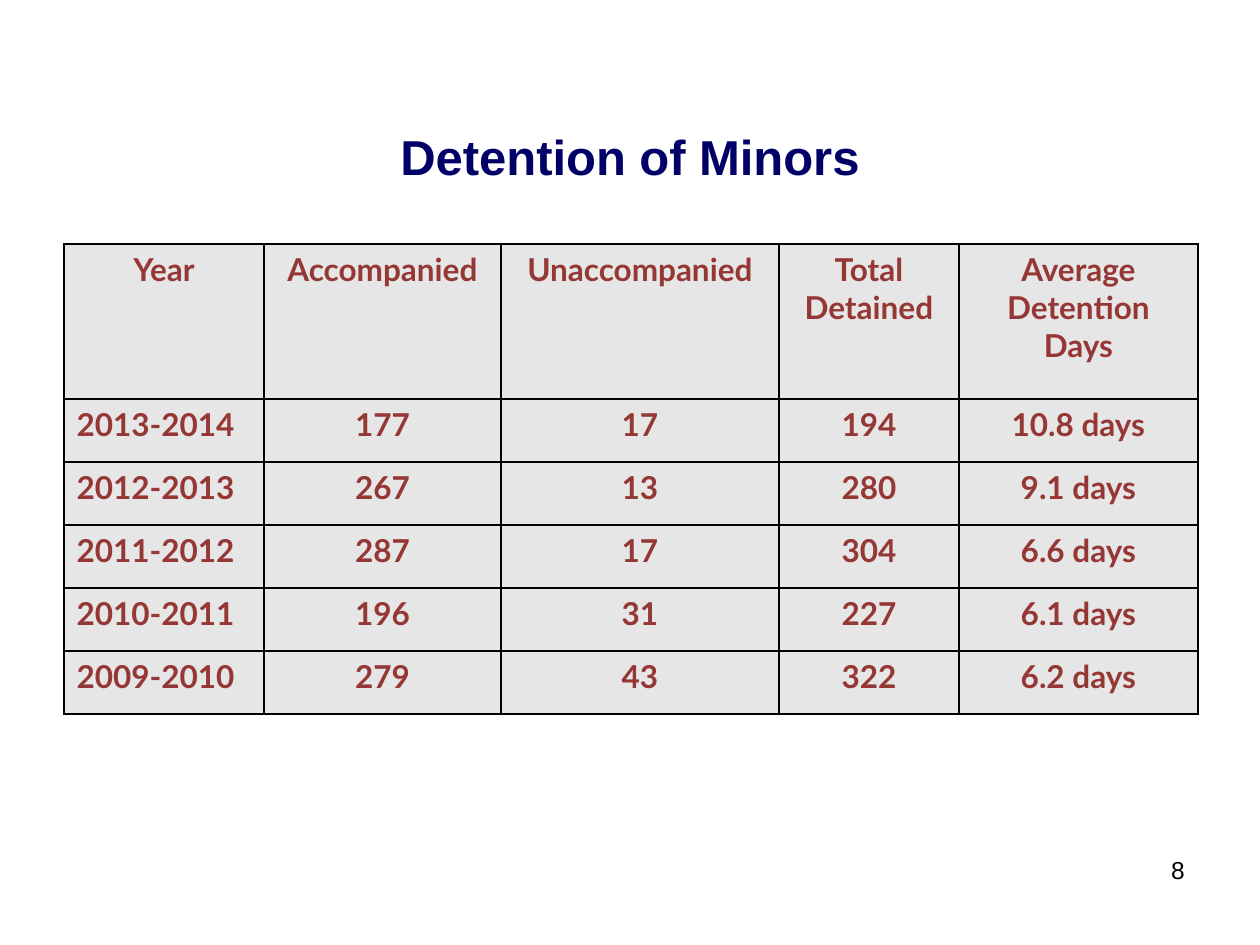
from lxml import etree
from pptx import Presentation
from pptx.dml.color import RGBColor
from pptx.enum.text import MSO_ANCHOR, PP_ALIGN
from pptx.oxml.ns import qn
from pptx.util import Pt

EMU_PER_PX = 914400 / 126
LEFT, CENTER, RIGHT = PP_ALIGN.LEFT, PP_ALIGN.CENTER, PP_ALIGN.RIGHT
MIDDLE = MSO_ANCHOR.MIDDLE
TITLE_ONLY = 5

COLUMN_WIDTHS = [200, 237, 278, 180, 239]
HEADER_HEIGHT, YEAR_HEIGHT = 155, 63
DETENTIONS = [
    ["Year", "Accompanied", "Unaccompanied", "Total Detained", "Average Detention Days"],
    ["2013-2014", "177", "17", "194", "10.8 days"],
    ["2012-2013", "267", "13", "280", "9.1 days"],
    ["2011-2012", "287", "17", "304", "6.6 days"],
    ["2010-2011", "196", "31", "227", "6.1 days"],
    ["2009-2010", "279", "43", "322", "6.2 days"],
]


def px(length):
    """Turn pixels into EMU."""
    return round(length * EMU_PER_PX)


def color(value):
    """Turn a hex string into a colour."""
    return RGBColor.from_string(value)


def write(frame, text, size, font, fill, align, bold=False):
    """Put one formatted paragraph into a text frame."""
    frame.word_wrap = True
    paragraph = frame.paragraphs[0]
    paragraph.text = text
    paragraph.alignment = align
    paragraph.font.size = Pt(size)
    paragraph.font.name = font
    paragraph.font.bold = bold
    paragraph.font.color.rgb = color(fill)


def add_borders(cell, line_color, width):
    """Draw a solid line on all four sides of a cell."""
    properties = cell._tc.get_or_add_tcPr()
    for side in ("a:lnL", "a:lnR", "a:lnT", "a:lnB"):
        line = etree.SubElement(properties, qn(side), w=str(Pt(width)))
        solid = etree.SubElement(line, qn("a:solidFill"))
        etree.SubElement(solid, qn("a:srgbClr"), val=line_color)


def add_title(slide, left, top, width, height):
    """Place and format the slide title."""
    title = slide.shapes.title
    title.left, title.top, title.width, title.height = map(px, (left, top, width, height))
    title.text_frame.vertical_anchor = MIDDLE
    write(title.text_frame, "Detention of Minors", 28, "Arial", "000066", CENTER, True)


def add_detention_table(slide, left, top):
    """Place the table of detained minors by year."""
    heights = [HEADER_HEIGHT] + [YEAR_HEIGHT] * (len(DETENTIONS) - 1)
    table = slide.shapes.add_table(
        len(heights), len(COLUMN_WIDTHS),
        px(left), px(top), px(sum(COLUMN_WIDTHS)), px(sum(heights))).table
    for column, width in zip(table.columns, COLUMN_WIDTHS):
        column.width = px(width)
    for r, (height, values) in enumerate(zip(heights, DETENTIONS)):
        table.rows[r].height = px(height)
        for c, value in enumerate(values):
            cell = table.cell(r, c)
            add_borders(cell, "000000", 1)
            cell.fill.solid()
            cell.fill.fore_color.rgb = color("E6E6E6")
            align = LEFT if r and c == 0 else CENTER
            write(cell.text_frame, value, 18, "Lato", "953735", align, True)


def add_page_number(slide, left, top, width, height):
    """Place the page number."""
    box = slide.shapes.add_textbox(*map(px, (left, top, width, height)))
    write(box.text_frame, "8", 14, "Arial", "000000", RIGHT)


def main():
    """Build and save the slide."""
    deck = Presentation()
    deck.slide_width, deck.slide_height = px(1260), px(945)
    slide = deck.slides.add_slide(deck.slide_layouts[TITLE_ONLY])
    add_title(slide, 63, 115, 1134, 81)
    add_detention_table(slide, 64, 244)
    add_page_number(slide, 903, 849, 294, 66)
    deck.save("out.pptx")


if __name__ == "__main__":
    main()
